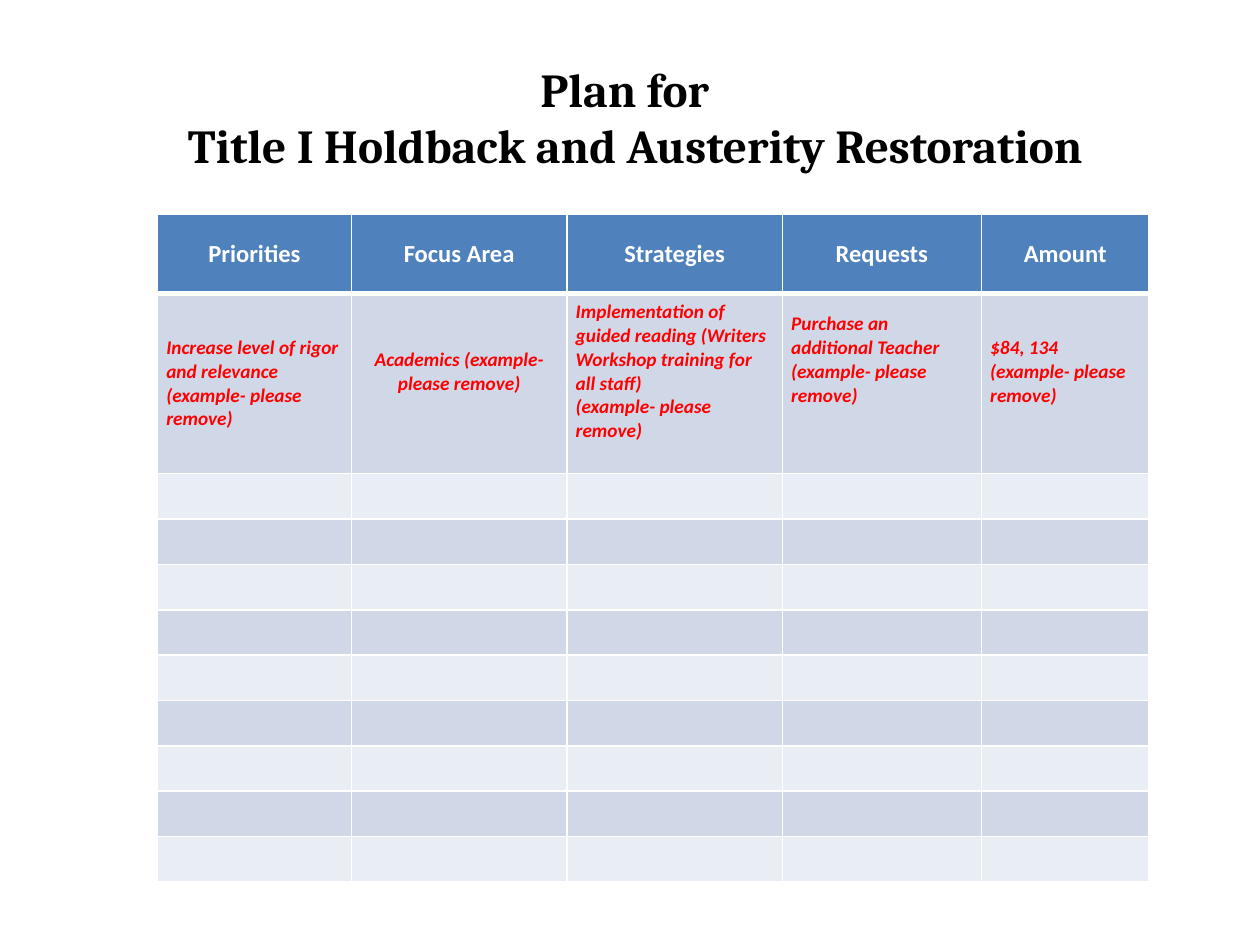
from pptx import Presentation
from pptx.dml.color import RGBColor
from pptx.enum.text import MSO_ANCHOR as Anchor, PP_ALIGN as Align
from pptx.oxml import parse_xml
from pptx.oxml.ns import nsdecls
from pptx.util import Inches, Pt

WHITE, BLUE, BANDS = "FFFFFF", "4F81BD", ("E9EDF4", "D0D8E8")
TITLE = dict(name="Cambria", size=Pt(27), bold=True)
HEAD = dict(name="Calibri", size=Pt(14), bold=True)
BODY = dict(name="Calibri", size=Pt(11), bold=True, italic=True)
COLS = [1.54, 1.71, 1.71, 1.58, 1.33]
ROWS = [0.63, 1.43] + [0.36] * 9
NOTE = "(example- please remove)"
HEADS = ["Priorities", "Focus Area", "Strategies", "Requests", "Amount"]
ITEMS = [
    (f"Increase level of rigor and relevance {NOTE}", Align.LEFT, 0.04),
    (f"Academics {NOTE}", Align.CENTER, 0.23),
    ("Implementation of guided reading (Writers Workshop training "
     f"for all staff)\n{NOTE}", Align.LEFT, 0.23),
    (f"Purchase an additional Teacher\n{NOTE}", Align.LEFT, 0.42),
    (f"$84, 134\n{NOTE}", Align.LEFT, 0.23),
]


def rgb(code):
    """Turn a hex string into a colour."""
    return RGBColor.from_string(code)


def write(frame, text, look, color, align):
    """Fill a text frame and format every run."""
    frame.text = text
    for para in frame.paragraphs:
        para.alignment = align
        for run in para.runs:
            for key, value in look.items():
                setattr(run.font, key, value)
            run.font.color.rgb = rgb(color)


def edge(cell, top, bottom):
    """Draw white borders, with top and bottom widths in points."""
    props = cell._tc.get_or_add_tcPr()
    sides = dict(lnL=1, lnR=1, lnT=top, lnB=bottom)
    for spot, (tag, width) in enumerate(sides.items()):
        props.insert(spot, parse_xml(
            f'<a:{tag} {nsdecls("a")} w="{Pt(width)}"><a:solidFill>'
            f'<a:srgbClr val="{WHITE}"/></a:solidFill></a:{tag}>'))


def add_title(slide, left, top, width, height):
    """Place the centred title."""
    box = slide.shapes.add_textbox(*map(Inches, (left, top, width, height)))
    frame = box.text_frame
    frame.word_wrap = True
    frame.vertical_anchor = Anchor.MIDDLE
    write(frame, "Plan for \v Title I Holdback and Austerity Restoration",
          TITLE, "000000", Align.CENTER)


def add_plan(slide, left, top, width, height):
    """Place the plan table with its banded rows."""
    shape = slide.shapes.add_table(
        len(ROWS), len(COLS), *map(Inches, (left, top, width, height)))
    table = shape.table
    for col, size in zip(table.columns, COLS):
        col.width = Inches(size)
    for r, size in enumerate(ROWS):
        table.rows[r].height = Inches(size)
        for c in range(len(COLS)):
            cell = table.cell(r, c)
            cell.fill.solid()
            cell.fill.fore_color.rgb = rgb(BANDS[r % 2] if r else BLUE)
            edge(cell, 3 if r == 1 else 1, 1 if r else 3)
            cell.vertical_anchor = Anchor.MIDDLE
            cell.margin_left = cell.margin_right = Inches(0.07)
            cell.margin_top = cell.margin_bottom = Inches(0.04 if r < 2 else 0.02)
    for c, (head, item) in enumerate(zip(HEADS, ITEMS)):
        write(table.cell(0, c).text_frame, head, HEAD, WHITE, Align.CENTER)
        text, align, pad = item
        cell = table.cell(1, c)
        cell.margin_bottom = Inches(pad)
        write(cell.text_frame, text, BODY, "FF0000", align)


def main():
    """Build and save the slide."""
    deck = Presentation()
    deck.slide_width, deck.slide_height = Inches(10), Inches(7.5)
    slide = deck.slides.add_slide(deck.slide_layouts[6])
    add_title(slide, 0.5, 0.3, 9, 1.25)
    add_plan(slide, 1.25, 1.7, sum(COLS), sum(ROWS))
    deck.save("out.pptx")


if __name__ == "__main__":
    main()
